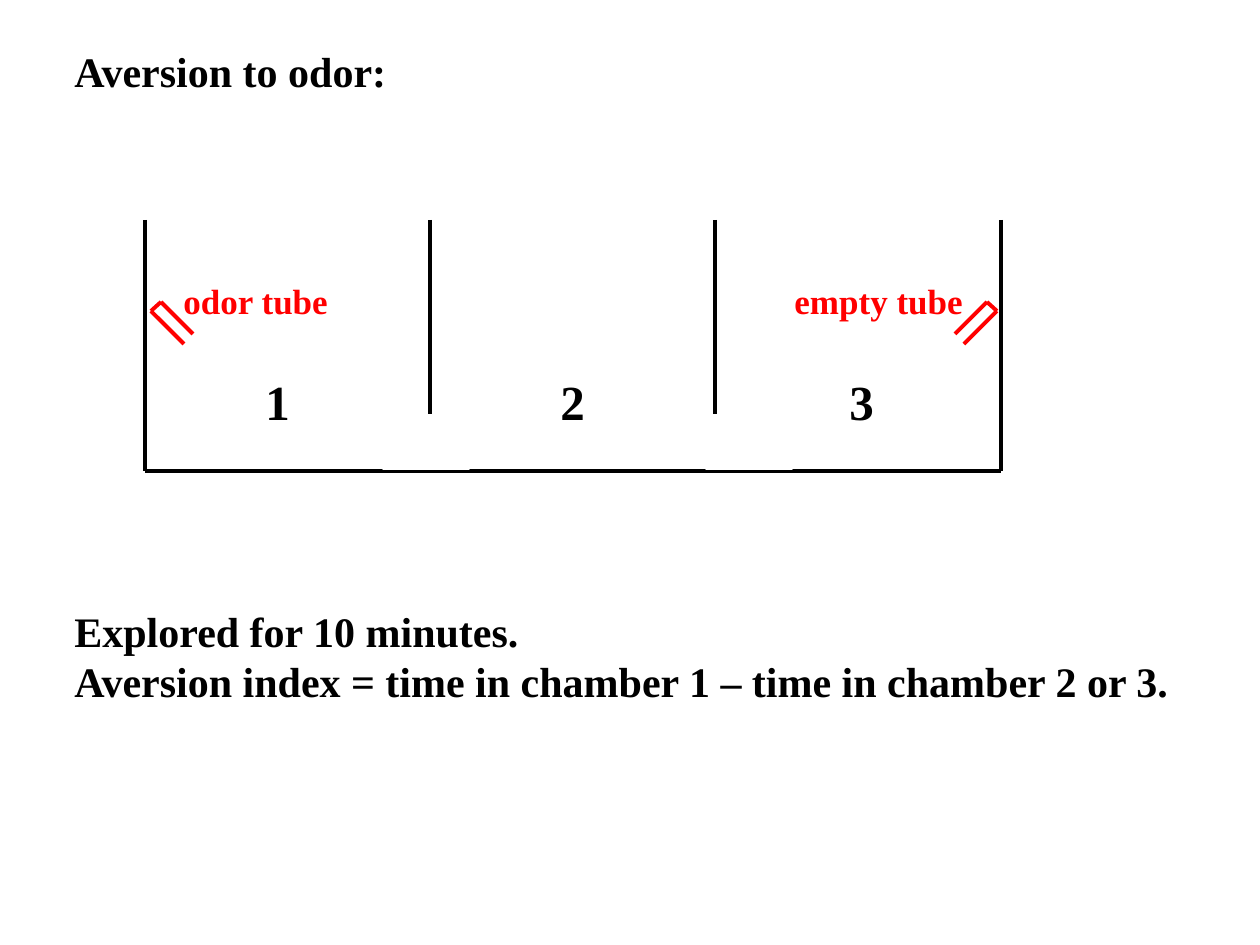
from pptx import Presentation
from pptx.dml.color import RGBColor
from pptx.enum.shapes import MSO_CONNECTOR, MSO_SHAPE
from pptx.enum.text import MSO_AUTO_SIZE
from pptx.oxml.ns import qn
from pptx.util import Inches, Pt
from lxml.etree import SubElement

PX = Inches(1) // 126
BLACK, RED, WHITE = "000000", "FF0000", "FFFFFF"
color = RGBColor.from_string

deck = Presentation()
deck.slide_width, deck.slide_height = Inches(10), Inches(7.5)
page = deck.slides.add_slide(deck.slide_layouts[6])


def add_line(x1, y1, x2, y2, ink):
    line = page.shapes.add_connector(
        MSO_CONNECTOR.STRAIGHT, x1 * PX, y1 * PX, x2 * PX, y2 * PX)
    line.line.color.rgb = color(ink)
    line.line.width = Pt(2.25)
    SubElement(line._element.spPr, qn("a:effectLst"))


def add_text(left, top, width, height, lines, size, ink, wrap=False):
    box = page.shapes.add_textbox(left * PX, top * PX, width * PX, height * PX)
    frame = box.text_frame
    frame.word_wrap = wrap
    frame.auto_size = MSO_AUTO_SIZE.SHAPE_TO_FIT_TEXT
    frame.text = "\n".join(lines)
    for para in frame.paragraphs:
        para.font.name = "Times New Roman"
        para.font.size = Pt(size)
        para.font.bold = True
        para.font.color.rgb = color(ink)


add_text(62, 39, 1158, 63, ["Aversion to odor:"], 24, BLACK, wrap=True)

left_wall, right_wall, wall_top, floor = 145, 1001, 220, 471
walls = [left_wall + (right_wall - left_wall) * i // 3 for i in range(4)]
for x in walls:
    add_line(x, wall_top, x, floor, BLACK)
for start, end in zip(walls, walls[1:]):
    add_line(start, floor, end, floor, BLACK)

for left in (383, 706):
    doorway = page.shapes.add_shape(
        MSO_SHAPE.RECTANGLE, left * PX, 415 * PX, 86 * PX, 54 * PX)
    doorway.shadow.inherit = False
    doorway.fill.solid()
    doorway.fill.fore_color.rgb = color(WHITE)
    doorway.line.color.rgb = color(WHITE)
    doorway.line.width = Pt(0.75)

tube = [(193, 334), (161, 302), (151, 311), (184, 344)]
mirrored_tube = [(left_wall + right_wall + 2 - x, y) for x, y in tube]
for points in (tube, mirrored_tube):
    for start, end in zip(points, points[1:]):
        add_line(*start, *end, RED)

add_text(171, 273, 171, 55, ["odor tube"], 20, RED)
add_text(782, 273, 195, 55, ["empty tube"], 20, RED)

for number, left in enumerate((253, 548, 837), 1):
    add_text(left, 365, 50, 72, [str(number)], 28, BLACK)

add_text(62, 599, 1130, 115, [
    "Explored for 10 minutes.",
    "Aversion index = time in chamber 1 – time in chamber 2 or 3.",
], 24, BLACK)

deck.save("out.pptx")
